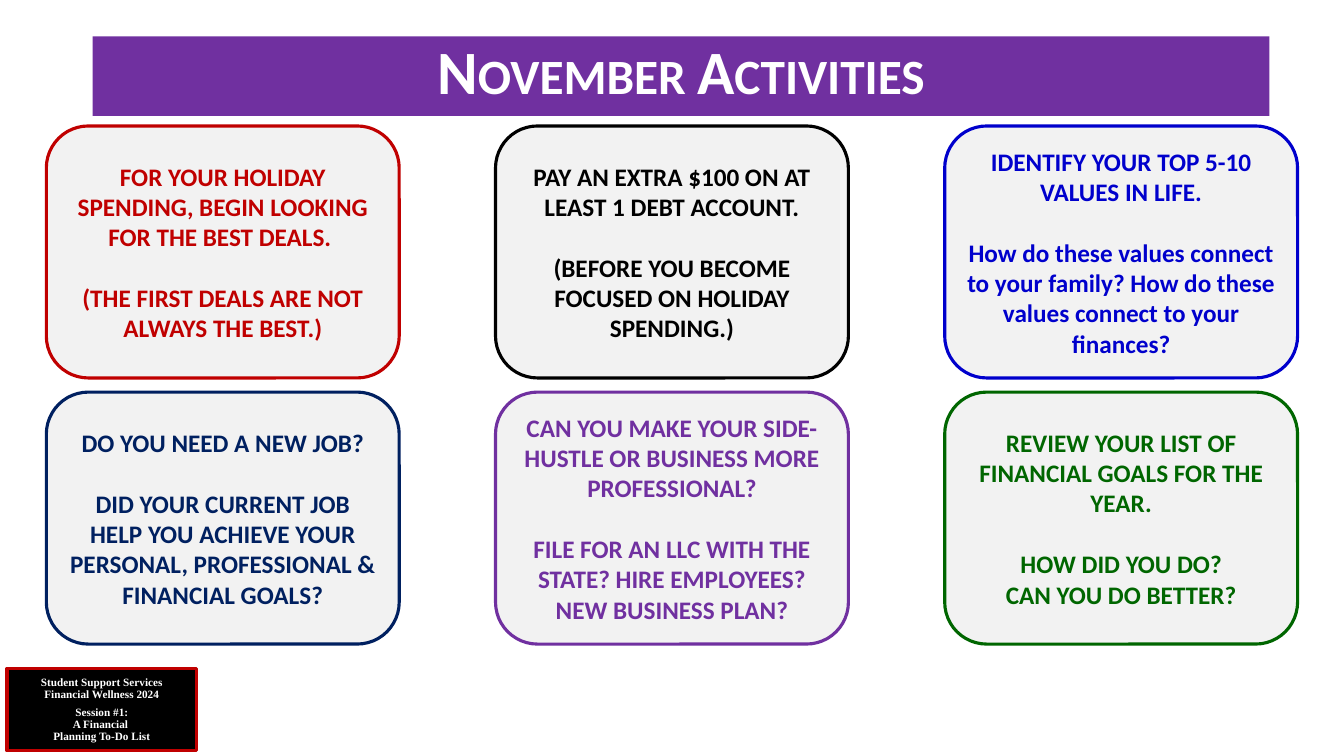
from copy import deepcopy

from pptx import Presentation
from pptx.dml.color import RGBColor
from pptx.enum.shapes import MSO_SHAPE
from pptx.enum.text import MSO_ANCHOR, PP_ALIGN
from pptx.oxml.ns import qn
from pptx.util import Inches, Pt

THEME = {
    "white": "FFFFFF", "black": "000000", "card": "F2F2F2", "red": "C00000",
    "blue": "0000CC", "navy": "002060", "purple": "7030A0", "green": "006600",
    "sans": "Calibri", "serif": "Times New Roman",
    "title": 44, "body": 18, "footer": 8, "line": 2.25,
}


def color(name):
    return RGBColor.from_string(THEME[name])


def add_box(s, kind, at, fill, line, paras, face, size, ink,
            spacing=1.0, anchor=MSO_ANCHOR.MIDDLE):
    """Add a filled shape; paras holds (text, points of space before) pairs."""
    sp = s.shapes.add_shape(kind, *[Inches(v) for v in at])
    sp.shadow.inherit = False
    sp.fill.solid()
    sp.fill.fore_color.rgb = color(fill)
    if line:
        sp.line.color.rgb = color(line)
        sp.line.width = Pt(THEME["line"])
    else:
        sp.line.fill.background()
    tf = sp.text_frame
    tf.word_wrap = True
    tf.vertical_anchor = anchor
    font = {"name": THEME[face], "size": Pt(THEME[size]), "bold": True}
    for i, (text, before) in enumerate(paras):
        p = tf.paragraphs[0] if i == 0 else tf.add_paragraph()
        p.text = text
        layout = {"alignment": PP_ALIGN.CENTER, "line_spacing": spacing,
                  "space_before": Pt(before)}
        for key, value in layout.items():
            setattr(p, key, value)
        for r in p.runs:
            for key, value in font.items():
                setattr(r.font, key, value)
            r.font.color.rgb = color(ink)
        # Line breaks take the size of the text around them
        for br in p._p.findall(qn("a:br")):
            br.insert(0, deepcopy(p.runs[0]._r.rPr))
    return sp


prs = Presentation()
prs.slide_width, prs.slide_height = Inches(13.33), Inches(7.5)
s = prs.slides.add_slide(prs.slide_layouts[6])

# Session label
add_box(s, MSO_SHAPE.RECTANGLE, (0.07, 6.63, 1.88, 0.82), "black", "red",
        [("Student Support Services", 0), ("Financial Wellness 2024", 0),
         ("Session #1:\vA Financial \vPlanning To-Do List", 4)],
        "serif", "footer", "white", spacing=0.9)

# Title banner in small capitals
banner = add_box(s, MSO_SHAPE.RECTANGLE, (0.92, 0.36, 11.67, 0.79), "purple", None,
                 [("November Activities", 0)], "sans", "title", "white",
                 spacing=0.9, anchor=MSO_ANCHOR.TOP)
banner.text_frame.paragraphs[0].runs[0]._r.get_or_add_rPr().set("cap", "small")

# Activity cards: three columns by two rows, one blank line after the lead
LEFT, TOP, CARD_W, CARD_H = 0.46, 1.25, 3.5, 2.5
COL_STEP, ROW_STEP, GAP = 4.455, 2.64, 22
activities = [
    ("red", ["FOR YOUR HOLIDAY SPENDING, BEGIN LOOKING FOR THE BEST DEALS. ",
             "(THE FIRST DEALS ARE NOT ALWAYS THE BEST.)"]),
    ("black", ["PAY AN EXTRA $100 ON AT LEAST 1 DEBT ACCOUNT.",
               "(BEFORE YOU BECOME FOCUSED ON HOLIDAY SPENDING.)"]),
    ("blue", ["IDENTIFY YOUR TOP 5-10 VALUES IN LIFE.",
              "How do these values connect to your family? "
              "How do these values connect to your finances?"]),
    ("navy", ["DO YOU NEED A NEW JOB?",
              "DID YOUR CURRENT JOB HELP YOU ACHIEVE YOUR PERSONAL, "
              "PROFESSIONAL & FINANCIAL GOALS?"]),
    ("purple", ["CAN YOU MAKE YOUR SIDE-HUSTLE OR BUSINESS MORE PROFESSIONAL?",
                "FILE FOR AN LLC WITH THE STATE? HIRE EMPLOYEES? NEW BUSINESS PLAN?"]),
    ("green", ["REVIEW YOUR LIST OF FINANCIAL GOALS FOR THE YEAR.",
               "HOW DID YOU DO?", "CAN YOU DO BETTER?"]),
]
for i, (ink, texts) in enumerate(activities):
    row, col = divmod(i, 3)
    at = (LEFT + col * COL_STEP, TOP + row * ROW_STEP, CARD_W, CARD_H)
    paras = [(text, GAP if n == 1 else 0) for n, text in enumerate(texts)]
    add_box(s, MSO_SHAPE.ROUNDED_RECTANGLE, at, "card", ink, paras,
            "sans", "body", ink)

prs.save("out.pptx")
